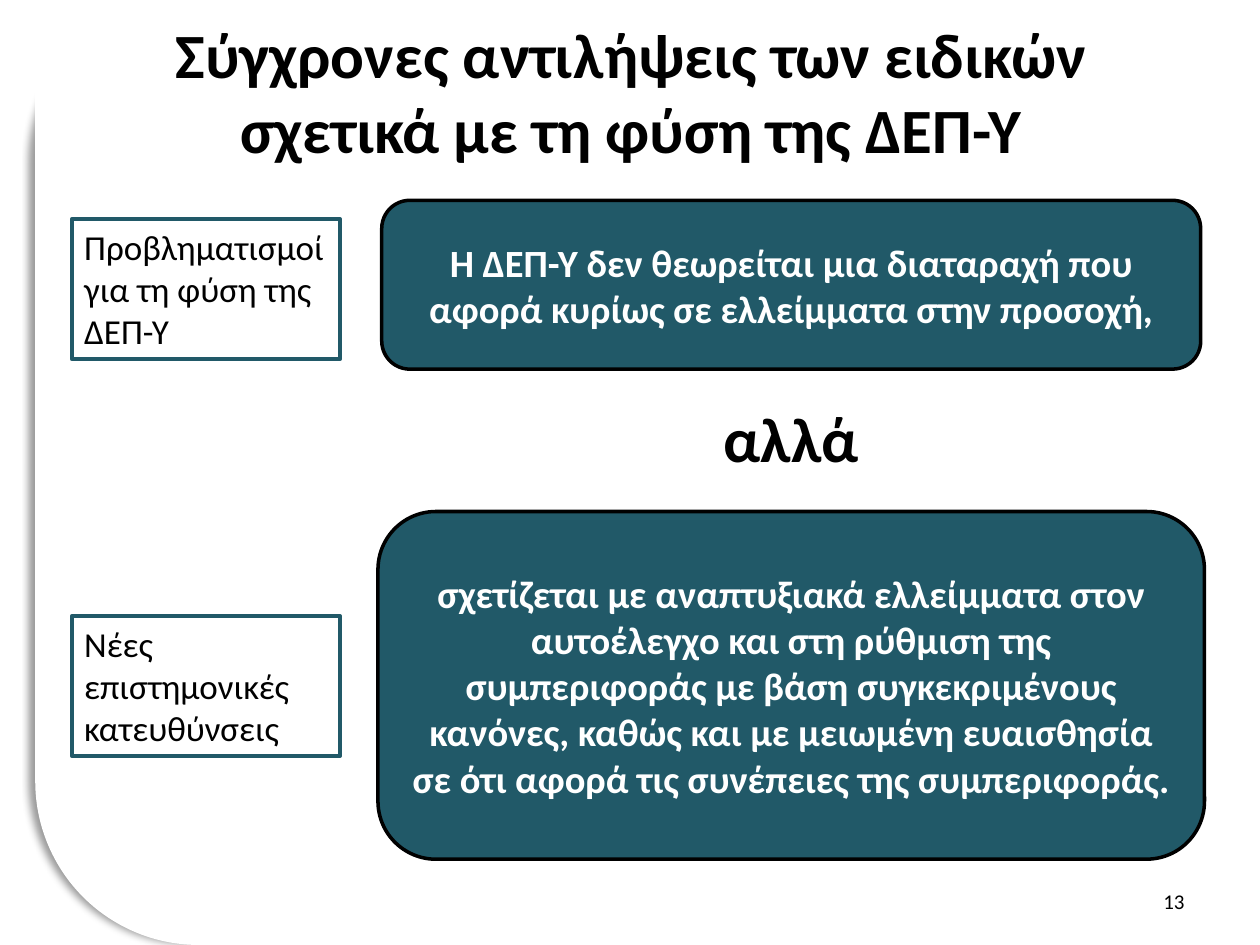
from lxml import etree
from pptx import Presentation
from pptx import util as u
from pptx.dml.color import RGBColor
from pptx.enum import shapes, text
from pptx.oxml import ns

TEAL, BLACK, WHITE = "215968", "000000", "FFFFFF"
FONT = "Calibri"
RECTANGLE = shapes.MSO_SHAPE.RECTANGLE
ROUNDED = shapes.MSO_SHAPE.ROUNDED_RECTANGLE
LEFT, CENTER, RIGHT = text.PP_ALIGN.LEFT, text.PP_ALIGN.CENTER, text.PP_ALIGN.RIGHT

TITLE = "Σύγχρονες αντιλήψεις των ειδικών σχετικά με τη φύση της ΔΕΠ-Υ"
PAGE_NUMBER = "13"
LINK_WORD = "αλλά"
PAGE_PANELS = [(3.98, 1.83, 6.06, 5.67), (0.28, -0.02, 9.76, 5.27)]
STATEMENTS = [
    ((3.03, 1.59, 6.5, 1.34),
     "Η ΔΕΠ-Υ δεν θεωρείται μια διαταραχή που αφορά κυρίως σε ελλείμματα στην προσοχή,"),
    ((3, 4.06, 6.56, 2.76),
     "σχετίζεται με αναπτυξιακά ελλείμματα στον αυτοέλεγχο και στη ρύθμιση της "
     "συμπεριφοράς με βάση συγκεκριμένους κανόνες, καθώς και με μειωμένη ευαισθησία "
     "σε ότι αφορά τις συνέπειες της συμπεριφοράς."),
]
LABELS = [
    (1.74, "Προβληματισμοί\nγια τη φύση της ΔΕΠ-Υ"),
    (4.89, "Νέες επιστημονικές κατευθύνσεις"),
]


def color(value):
    return RGBColor.from_string(value)


def inches(box):
    return [u.Inches(value) for value in box]


def write(shape, content, size, ink, align, bold=False,
          anchor=text.MSO_ANCHOR.MIDDLE, wrap=True):
    frame = shape.text_frame
    frame.text = content
    frame.word_wrap = wrap
    frame.auto_size = text.MSO_AUTO_SIZE.NONE
    frame.vertical_anchor = anchor
    for paragraph in frame.paragraphs:
        paragraph.alignment = align
        for run in paragraph.runs:
            run.font.name = FONT
            run.font.size = u.Pt(size)
            run.font.bold = bold
            run.font.color.rgb = color(ink)


def add_box(slide, kind, box, fill=None, line=None, width=0):
    shape = slide.shapes.add_shape(kind, *inches(box))
    shape.shadow.inherit = False
    if fill:
        shape.fill.solid()
        shape.fill.fore_color.rgb = color(fill)
    else:
        shape.fill.background()
    if line:
        shape.line.color.rgb = color(line)
        shape.line.width = u.Pt(width)
    else:
        shape.line.fill.background()
    return shape


def add_shadow(shape):
    effects = shape._element.spPr.find(ns.qn("a:effectLst"))
    shadow = etree.SubElement(
        effects, ns.qn("a:outerShdw"), blurRad=str(u.Pt(4)), dist=str(u.Pt(3)),
        dir=str(180 * 60000), algn="r", rotWithShape="0")
    tone = etree.SubElement(shadow, ns.qn("a:srgbClr"), val=BLACK)
    etree.SubElement(tone, ns.qn("a:alpha"), val="40000")


def main():
    presentation = Presentation()
    presentation.slide_width, presentation.slide_height = u.Inches(10), u.Inches(7.5)
    slide = presentation.slides.add_slide(presentation.slide_layouts[5])

    page = add_box(slide, ROUNDED, (0.28, 0, 9.72, 7.5), WHITE)
    page.adjustments[0] = 0.173
    add_shadow(page)
    for box in PAGE_PANELS:
        add_box(slide, RECTANGLE, box, WHITE)

    title = slide.shapes.title
    title.left, title.top, title.width, title.height = inches((0.51, 0.13, 9, 1.18))
    write(title, TITLE, 36, BLACK, CENTER, bold=True)
    slide.shapes._spTree.append(title._element)

    number = slide.shapes.add_textbox(*inches((7.17, 6.95, 2.33, 0.4)))
    write(number, PAGE_NUMBER, 12, BLACK, RIGHT)

    for box, content in STATEMENTS:
        statement = add_box(slide, ROUNDED, box, TEAL, BLACK, 2)
        write(statement, content, 22, WHITE, CENTER, bold=True)

    link = slide.shapes.add_textbox(*inches((5.64, 3.12, 1.29, 0.71)))
    write(link, LINK_WORD, 36, BLACK, LEFT, bold=True,
          anchor=text.MSO_ANCHOR.TOP, wrap=False)

    for top, content in LABELS:
        label = add_box(slide, RECTANGLE, (0.57, top, 2.13, 1.11), line=TEAL, width=2.25)
        write(label, content, 20, BLACK, LEFT, anchor=text.MSO_ANCHOR.TOP)

    presentation.save("out.pptx")


if __name__ == "__main__":
    main()
